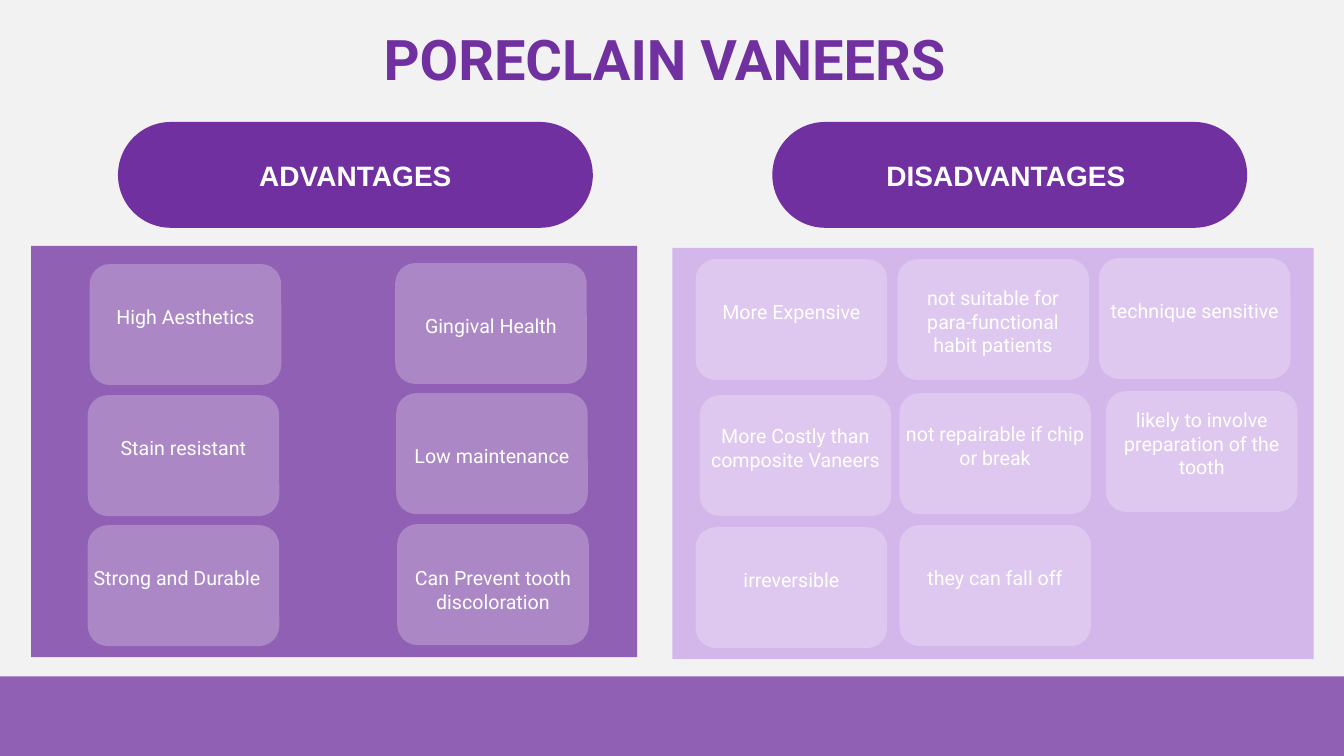
from lxml import etree
from pptx import Presentation
from pptx.dml.color import RGBColor
from pptx.enum import shapes, text
from pptx.oxml import ns
from pptx.util import Inches, Pt

PURPLE = RGBColor(0x70, 0x30, 0xA0)
LILAC = RGBColor(0xD3, 0xB6, 0xEA)
WHITE = RGBColor(0xFF, 0xFF, 0xFF)
PALE_GREY = RGBColor(0xF2, 0xF2, 0xF2)

RECT = shapes.MSO_SHAPE.RECTANGLE
ROUNDED = shapes.MSO_SHAPE.ROUNDED_RECTANGLE
CENTER = text.PP_ALIGN.CENTER
LEFT = text.PP_ALIGN.LEFT

TITLE_FONT = {"name": "Roboto", "size": Pt(40), "bold": True}
HEADING_FONT = {"name": "Arial", "size": Pt(20), "bold": True}
CARD_FONT = {"name": "Roboto", "size": Pt(14), "bold": False}

RAISED = (0.05, 0.21)
LOWERED = (0.09, 0.05)

CARDS = [
    (0.89, 2.62, "High Aesthetics", RAISED, CENTER),
    (0.87, 3.92, "Stain resistant", RAISED, CENTER),
    (0.87, 5.21, "Strong and Durable", RAISED, LEFT),
    (3.92, 2.61, "Gingival Health", LOWERED, CENTER),
    (3.93, 3.9, "Low maintenance", LOWERED, CENTER),
    (3.94, 5.2, "Can Prevent tooth discoloration", (0.15, 0.05), CENTER),
    (6.9, 2.57, "More Expensive", RAISED, CENTER),
    (6.94, 3.92, "More Costly than composite Vaneers", RAISED, CENTER),
    (6.9, 5.23, "irreversible", RAISED, CENTER),
    (8.9, 2.57, "not suitable for para-functional habit patients",
     LOWERED, CENTER),
    (8.92, 3.9, "not repairable if chip or break", RAISED, CENTER),
    (8.92, 5.21, "they can fall off", RAISED, CENTER),
    (10.9, 2.56, "technique sensitive", RAISED, CENTER),
    (10.97, 3.88, "likely to involve preparation of the tooth",
     RAISED, CENTER),
]


def apply(target, values):
    for name, value in values.items():
        setattr(target, name, value)


def add_block(page, kind, place, color, opacity=100):
    block = page.shapes.add_shape(kind, *map(Inches, place))
    block.shadow.inherit = False
    block.line.fill.background()
    block.fill.solid()
    block.fill.fore_color.rgb = color
    if opacity < 100:
        tint = block.fill._xPr.find(".//" + ns.qn("a:srgbClr"))
        alpha = etree.SubElement(tint, ns.qn("a:alpha"))
        alpha.set("val", str(opacity * 1000))
    return block


def write(box, wording, font, color, side=0.1, insets=(0.05, 0.05),
          alignment=CENTER, line_spacing=1.0):
    frame = box.text_frame
    apply(frame, {
        "word_wrap": True,
        "vertical_anchor": text.MSO_ANCHOR.MIDDLE,
        "margin_left": Inches(side),
        "margin_right": Inches(side),
        "margin_top": Inches(insets[0]),
        "margin_bottom": Inches(insets[1]),
    })
    para = frame.paragraphs[0]
    apply(para, {"alignment": alignment, "line_spacing": line_spacing})
    span = para.add_run()
    span.text = wording
    apply(span.font, font)
    span.font.color.rgb = color


def add_title(page, wording):
    box = page.shapes.add_textbox(*map(Inches, (2.03, 0.21, 9.26, 0.82)))
    write(box, wording, TITLE_FONT, PURPLE, line_spacing=0.9)


def add_heading(page, left, wording):
    pill = add_block(page, ROUNDED, (left, 1.21, 4.71, 1.05), PURPLE)
    pill.adjustments[0] = 0.5
    write(pill, wording, HEADING_FONT, WHITE)


def add_card(page, left, top, wording, insets, alignment):
    card = add_block(page, ROUNDED, (left, top, 1.9, 1.2), WHITE, 25)
    write(card, wording, CARD_FONT, WHITE, 0, insets, alignment)


def main():
    deck = Presentation()
    deck.slide_width, deck.slide_height = Inches(13.33), Inches(7.5)
    page = deck.slides.add_slide(deck.slide_layouts[6])
    page.background.fill.solid()
    page.background.fill.fore_color.rgb = PALE_GREY

    add_block(page, RECT, (0, 6.71, 13.33, 0.79), PURPLE, 75)
    add_title(page, "PORECLAIN VANEERS ")
    add_block(page, RECT, (6.67, 2.46, 6.36, 4.08), LILAC)
    add_block(page, RECT, (0.31, 2.44, 6.01, 4.08), PURPLE, 75)
    add_heading(page, 1.17, "ADVANTAGES")
    add_heading(page, 7.66, "DISADVANTAGES ")
    for card in CARDS:
        add_card(page, *card)
    deck.save("out.pptx")


if __name__ == "__main__":
    main()
